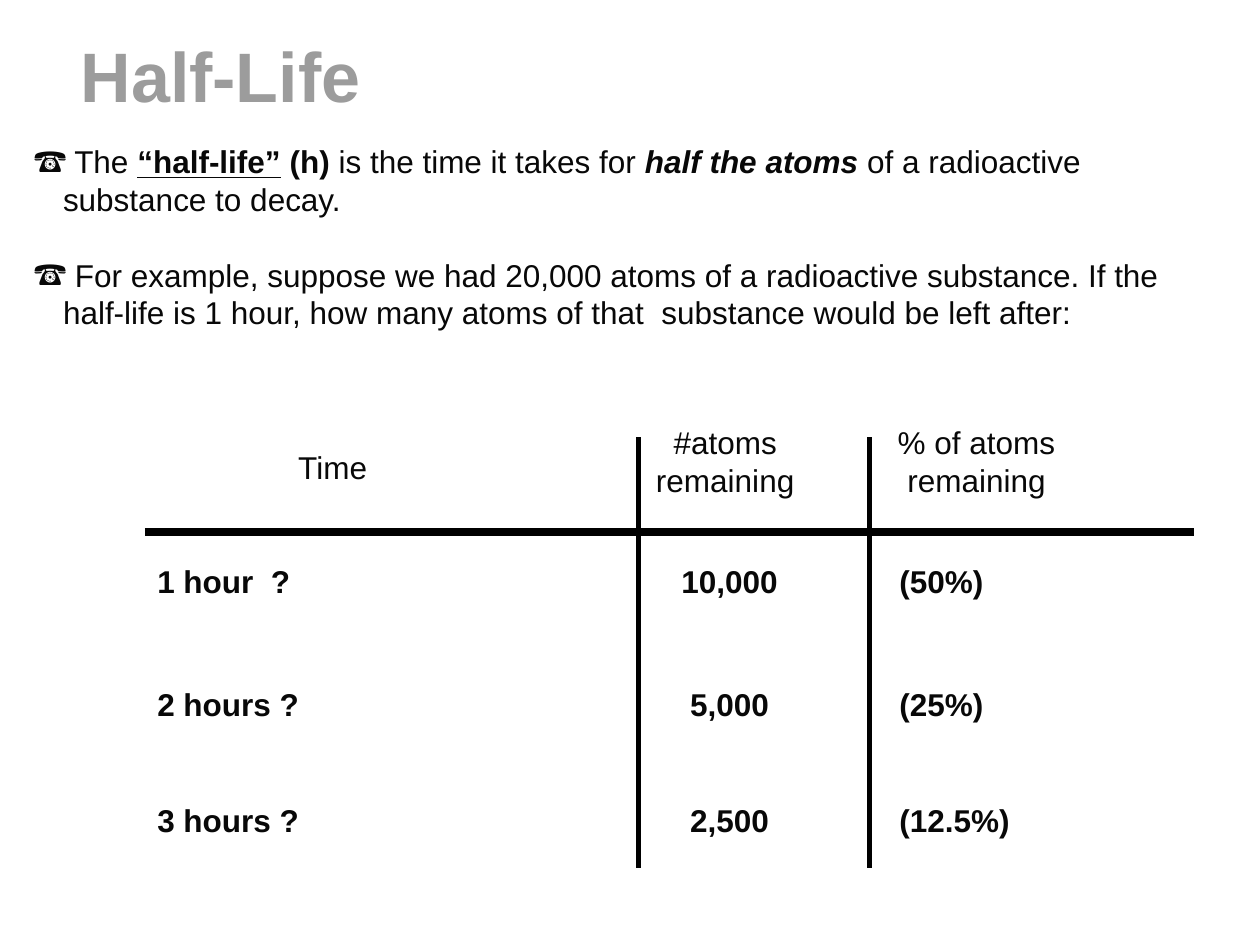
from lxml import etree
from pptx import Presentation
from pptx.dml.color import RGBColor
from pptx.enum.shapes import MSO_CONNECTOR
from pptx.enum.text import MSO_ANCHOR, MSO_AUTO_SIZE, PP_ALIGN
from pptx.oxml.ns import qn
from pptx.util import Inches, Pt

STRAIGHT = MSO_CONNECTOR.STRAIGHT
LEFT, CENTER = PP_ALIGN.LEFT, PP_ALIGN.CENTER
TOP, MIDDLE = MSO_ANCHOR.TOP, MSO_ANCHOR.MIDDLE
NO_FIT = MSO_AUTO_SIZE.NONE

THEME = {
    "font": "Arial",
    "title_size": 40,
    "body_size": 18,
    "title_color": "9C9C9C",
    "text_color": "080808",
    "rule_color": "000000",
}

TITLE = "Half-Life"
POINTS = [
    [
        (" The ", {}),
        ("“half-life”", {"bold": True, "underline": True}),
        (" (h)", {"bold": True}),
        (" is the time it takes for ", {}),
        ("half the atoms", {"bold": True, "italic": True}),
        (" of a radioactive substance to decay.", {}),
    ],
    [
        (" For example, suppose we had 20,000 atoms of a radioactive substance. "
         "If the half-life is 1 hour, how many atoms of that  substance "
         "would be left after:", {}),
    ],
]
HEADERS = [
    ("Time", (2.23, 3.51, 0.82, 0.4)),
    ("#atoms\nremaining", (5.1, 3.31, 1.31, 0.71)),
    ("% of atoms\nremaining", (7.02, 3.31, 1.46, 0.71)),
]
ROWS = [
    (4.41, ("1 hour  ?", "10,000", "(50%)")),
    (5.39, ("2 hours ?", "5,000", "(25%)")),
    (6.31, ("3 hours ?", "2,500", "(12.5%)")),
]
COLUMNS = [(1.15, 1.34, LEFT), (5.31, 0.96, CENTER), (7.04, 1.1, LEFT)]
ROW_HEIGHT = 0.4

TABLE_LEFT, TABLE_RIGHT, HEADER_RULE_Y = 1.15, 9.48, 4.22
DIVIDER_XS, DIVIDER_TOP, DIVIDER_BOTTOM = (5.07, 6.9), 3.47, 6.89


def write(paragraph, text, size=THEME["body_size"], color=THEME["text_color"],
          bold=False, italic=False, underline=False):
    for index, line in enumerate(text.split("\n")):
        if index:
            paragraph.add_line_break()
        run = paragraph.add_run()
        run.text = line
        font = run.font
        font.name, font.size = THEME["font"], Pt(size)
        font.bold, font.italic, font.underline = bold, italic, underline
        font.color.rgb = RGBColor.from_string(color)


def place(shape, box):
    shape.left, shape.top, shape.width, shape.height = map(Inches, box)


def prepare(shape, wrap, anchor):
    frame = shape.text_frame
    frame.auto_size = NO_FIT
    frame.word_wrap = wrap
    frame.vertical_anchor = anchor
    return frame


def add_label(slide, text, box, align=LEFT, **style):
    label = slide.shapes.add_textbox(*map(Inches, box))
    paragraph = prepare(label, False, TOP).paragraphs[0]
    paragraph.alignment = align
    write(paragraph, text, **style)


def add_bullet(paragraph, symbol="☎", indent=0.23):
    properties = paragraph._p.get_or_add_pPr()
    properties.set("marL", str(Inches(indent)))
    properties.set("indent", str(-Inches(indent)))
    etree.SubElement(properties, qn("a:buChar")).set("char", symbol)


def add_rule(slide, start, end, width):
    rule = slide.shapes.add_connector(STRAIGHT, *map(Inches, start + end))
    rule.line.width = Pt(width)
    rule.line.color.rgb = RGBColor.from_string(THEME["rule_color"])
    etree.SubElement(rule._element.spPr, qn("a:effectLst"))


def main():
    deck = Presentation()
    deck.slide_width, deck.slide_height = Inches(10), Inches(7.5)
    slide = deck.slides.add_slide(deck.slide_layouts[1])

    title, body = slide.placeholders
    place(title, (0.54, 0.21, 2.45, 0.77))
    heading = prepare(title, False, MIDDLE).paragraphs[0]
    heading.alignment = LEFT
    write(heading, TITLE, size=THEME["title_size"],
          color=THEME["title_color"], bold=True)

    place(body, (0.17, 1.08, 9.44, 1.62))
    frame = prepare(body, True, TOP)
    for index, point in enumerate(POINTS):
        paragraph = frame.add_paragraph() if index else frame.paragraphs[0]
        paragraph.space_before = Pt(21.5 if index else 0)
        add_bullet(paragraph)
        for text, style in point:
            write(paragraph, text, **style)

    for text, box in HEADERS:
        add_label(slide, text, box, align=CENTER)
    for top, cells in ROWS:
        for text, (left, width, align) in zip(cells, COLUMNS):
            add_label(slide, text, (left, top, width, ROW_HEIGHT),
                      align=align, bold=True)

    add_rule(slide, (TABLE_LEFT, HEADER_RULE_Y), (TABLE_RIGHT, HEADER_RULE_Y), 4.5)
    for x in DIVIDER_XS:
        add_rule(slide, (x, DIVIDER_TOP), (x, DIVIDER_BOTTOM), 3)

    deck.save("out.pptx")


if __name__ == "__main__":
    main()
